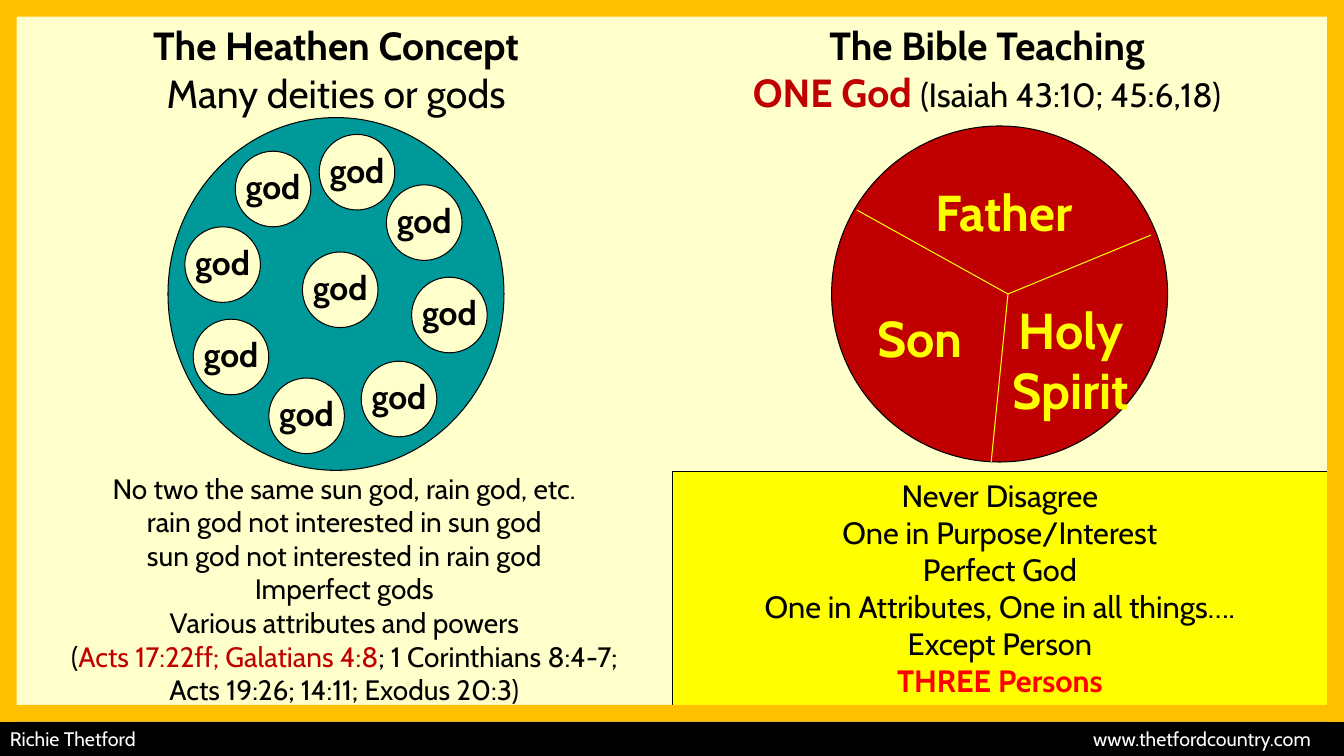
from lxml.etree import SubElement
from pptx import Presentation
from pptx.dml.color import RGBColor
from pptx.enum.shapes import MSO_CONNECTOR, MSO_SHAPE
from pptx.enum.text import MSO_ANCHOR, PP_ALIGN
from pptx.oxml.ns import qn
from pptx.util import Pt

FONT = "Cabin"
CREAM, TEAL, CRIMSON, YELLOW = "FFFFCC", "009999", "C00000", "FFFF00"
BLACK, WHITE, RED, GOLD = "000000", "FFFFFF", "FF0000", "FFC000"

WIDTH, HEIGHT = 960, 540
FRAME = 12           # thickness of the gold border
FOOTER_TOP = 515.5
GOD_SIZE = 54
GOD_CORNERS = [(228, 96), (276, 132), (294, 198), (258, 258), (192, 270),
               (138, 228), (132, 162), (168, 108), (216, 180)]
PERSON_WIDTH = 130   # wide enough to keep each name on one line

HEATHEN_POINTS = [
    "No two the same sun god, rain god, etc.",
    "rain god not interested in sun god",
    "sun god not interested in rain god",
    "Imperfect gods",
    "Various attributes and powers",
    ["(", ("Acts 17:22ff; Galatians 4:8", {"color": CRIMSON}),
     "; 1 Corinthians 8:4-7;"],
    "Acts 19:26; 14:11; Exodus 20:3)",
]
BIBLE_POINTS = [
    "Never Disagree",
    "One in Purpose/Interest",
    "Perfect God",
    "One in Attributes, One in all things….",
    "Except Person",
    [("THREE Persons", {"color": RED, "bold": True})],
]


def rgb(value):
    return RGBColor.from_string(value)


def format_run(run, size, color=BLACK, bold=False):
    run.font.name = FONT
    run.font.size = Pt(size)
    run.font.bold = bold
    run.font.color.rgb = rgb(color)


def write_text(shape, paragraphs, align=PP_ALIGN.CENTER, anchor=MSO_ANCHOR.TOP,
               wrap=True, margin=7.2, lift=0, **style):
    """Each paragraph is a string or a list of strings and (text, style) pairs."""
    frame = shape.text_frame
    frame.word_wrap = wrap
    frame.vertical_anchor = anchor
    frame.margin_left = frame.margin_right = Pt(margin)
    frame.margin_top = Pt(margin / 2)
    frame.margin_bottom = Pt(margin / 2 + lift)
    for index, parts in enumerate(paragraphs):
        paragraph = frame.add_paragraph() if index else frame.paragraphs[0]
        paragraph.alignment = align
        for part in [parts] if isinstance(parts, str) else parts:
            text, changes = (part, {}) if isinstance(part, str) else part
            run = paragraph.add_run()
            run.text = text
            format_run(run, **{**style, **changes})


def add_text(slide, box, paragraphs, **style):
    shape = slide.shapes.add_textbox(*map(Pt, box))
    write_text(shape, paragraphs, **style)


def add_figure(slide, kind, box, fill, outlined=False):
    shape = slide.shapes.add_shape(kind, *map(Pt, box))
    shape.shadow.inherit = False
    shape.fill.solid()
    shape.fill.fore_color.rgb = rgb(fill)
    if outlined:
        shape.line.color.rgb = rgb(BLACK)
        shape.line.width = Pt(0.75)
    else:
        shape.line.fill.background()
    return shape


def add_divider(slide, start, end):
    line = slide.shapes.add_connector(MSO_CONNECTOR.STRAIGHT,
                                      *map(Pt, (*start, *end)))
    line.line.color.rgb = rgb(YELLOW)
    line.line.width = Pt(0.75)
    SubElement(line._element.spPr, qn("a:effectLst"))


def add_heathen_side(slide):
    add_figure(slide, MSO_SHAPE.OVAL, (120, 84, 240, 252), TEAL, outlined=True)
    add_text(slide, (84, 12, 312, 74),
             ["The Heathen Concept", [("Many deities or gods", {"bold": False})]],
             size=28, bold=True)
    for left, top in GOD_CORNERS:
        circle = add_figure(slide, MSO_SHAPE.OVAL,
                            (left, top, GOD_SIZE, GOD_SIZE), CREAM, outlined=True)
        write_text(circle, ["god"], anchor=MSO_ANCHOR.MIDDLE, wrap=False,
                   margin=0, lift=3.6, size=24, bold=True)
    add_text(slide, (12, 333, 468, 177), HEATHEN_POINTS, size=20)


def add_bible_side(slide):
    add_figure(slide, MSO_SHAPE.OVAL, (594, 90, 240, 240), CRIMSON, outlined=True)
    add_text(slide, (516, 12, 378, 75),
             ["The Bible Teaching",
              [("ONE God ", {"color": CRIMSON}),
               ("(Isaiah 43:10; 45:6,18)", {"size": 24, "bold": False})]],
             size=28, bold=True)

    # Three persons within the one circle
    for end in [(612, 150), (708, 330), (822, 168)]:
        add_divider(slide, (720, 210), end)
    for center, top, height, lines in [(717, 126, 50, ["Father"]),
                                       (657, 216, 50, ["Son"]),
                                       (765, 210, 94, ["Holy", "Spirit"])]:
        add_text(slide, (center - PERSON_WIDTH / 2, top, PERSON_WIDTH, height),
                 lines, size=36, color=YELLOW, bold=True)

    panel = add_figure(slide, MSO_SHAPE.RECTANGLE, (480.5, 337, 467.5, 167),
                       YELLOW, outlined=True)
    write_text(panel, BIBLE_POINTS, size=22)


def add_footer(slide):
    height = HEIGHT - FOOTER_TOP
    bar = add_figure(slide, MSO_SHAPE.RECTANGLE,
                     (0, FOOTER_TOP, WIDTH, height), BLACK)
    write_text(bar, ["Richie Thetford"], align=PP_ALIGN.LEFT, size=14, color=WHITE)
    add_text(slide, (743.5, FOOTER_TOP, 200, height), ["www.thetfordcountry.com"],
             align=PP_ALIGN.RIGHT, size=14, color=WHITE)


def add_frame(slide):
    for box in [(0, 0, FRAME, FOOTER_TOP),
                (WIDTH - FRAME, 0, FRAME, FOOTER_TOP),
                (0, 0, WIDTH, FRAME),
                (0, FOOTER_TOP - FRAME, WIDTH, FRAME)]:
        add_figure(slide, MSO_SHAPE.RECTANGLE, box, GOLD)


def main():
    presentation = Presentation()
    presentation.slide_width = Pt(WIDTH)
    presentation.slide_height = Pt(HEIGHT)
    slide = presentation.slides.add_slide(presentation.slide_layouts[6])
    slide.background.fill.solid()
    slide.background.fill.fore_color.rgb = rgb(CREAM)

    add_heathen_side(slide)
    add_bible_side(slide)
    add_footer(slide)
    add_frame(slide)
    presentation.save("out.pptx")


if __name__ == "__main__":
    main()
